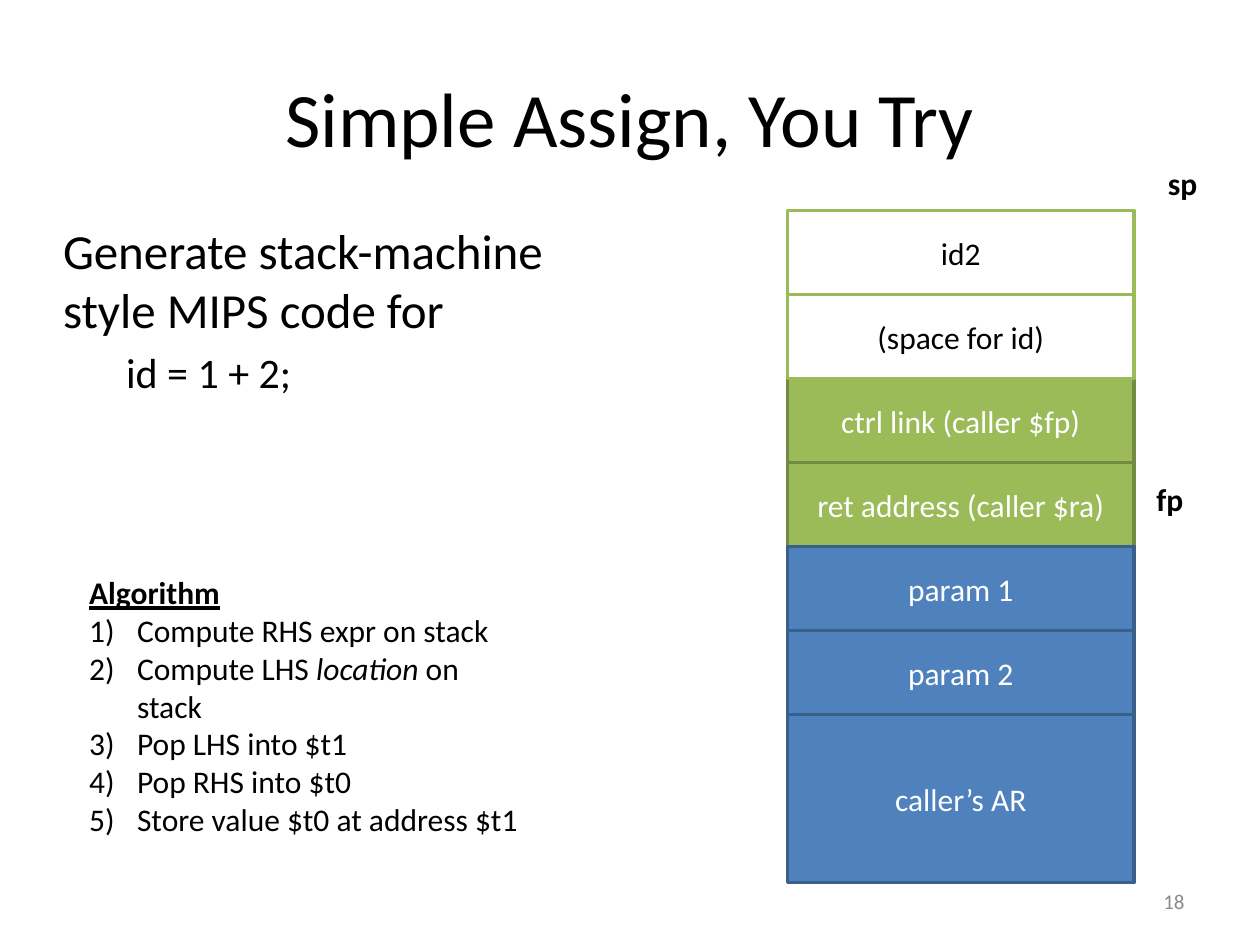
from pptx import Presentation
from pptx.dml.color import RGBColor
from pptx.enum.shapes import MSO_SHAPE
from pptx.enum.text import MSO_ANCHOR, MSO_AUTO_SIZE, PP_ALIGN
from pptx.oxml.ns import qn
from pptx.util import Inches, Pt
from lxml.etree import SubElement

TITLE = "Simple Assign, You Try"
TASK = [("Generate stack-machine style MIPS code for", 28, 0, 5.6),
        ("id = 1 + 2;", 24, 0.5, 4.8)]
HEAD = "Algorithm"
STEPS = [
    ["Compute RHS expr on stack"],
    ["Compute LHS ", "location", " on stack"],
    ["Pop LHS into $t1"],
    ["Pop RHS into $t0"],
    ["Store value $t0 at address $t1"],
]
STACK = [
    ("id2", "local", 1),
    ("(space for id)", "local", 1),
    ("ctrl link (caller $fp)", "frame", 1),
    ("ret address (caller $ra)", "frame", 1),
    ("param 1", "caller", 1),
    ("param 2", "caller", 1),
    ("caller’s AR", "caller", 2),
]
MARKS = [("sp", 9.17, 1.25), ("fp", 9.08, 3.76)]
NUMBER = "18"

THEME = {
    "font": "Calibri",
    "title": 44, "text": 18, "small": 12,
    "ink": "000000", "gray": "8B8B8B",
    "frame": ("9BBB59", "728A41", "FFFFFF"),
    "local": ("FFFFFF", "9BBB59", "000000"),
    "caller": ("4F81BD", "3A5F8B", "FFFFFF"),
}
LAYERS = ["frame", "local", "caller"]
LEFT, TOP, WIDTH, UNIT = 6.25, 1.67, 2.75, 2 / 3


def style(para, size=THEME["text"], color=THEME["ink"], bold=False):
    for run in para.runs:
        font = run.font
        font.name, font.size, font.bold = THEME["font"], Pt(size), bold
        font.color.rgb = RGBColor.from_string(color)


def place(shape, left, top, width, height):
    shape.left, shape.top = Inches(left), Inches(top)
    shape.width, shape.height = Inches(width), Inches(height)


def bare(frame):
    frame.margin_left = frame.margin_right = 0
    frame.margin_top = frame.margin_bottom = 0
    frame.auto_size = MSO_AUTO_SIZE.NONE
    frame.word_wrap = True


def indent(para, left, first, mark, **attrs):
    props = para._p.get_or_add_pPr()
    props.set("marL", str(Inches(left)))
    props.set("indent", str(Inches(first)))
    SubElement(props, qn(mark), **attrs)


def label(slide, text, left, top, width, height):
    box = slide.shapes.add_textbox(
        Inches(left), Inches(top), Inches(width), Inches(height))
    box.text_frame.word_wrap = True
    box.text_frame.text = text
    return box.text_frame


def add_task(body):
    place(body, 0.5, 1.75, 4.42, 4.95)
    frame = body.text_frame
    bare(frame)
    frame.text = "\n".join(row[0] for row in TASK)
    for para, (_, size, left, gap) in zip(frame.paragraphs, TASK):
        para.space_before = Pt(gap)
        indent(para, left, 0, "a:buNone")
        style(para, size)


def add_steps(slide):
    frame = label(slide, HEAD, 0.61, 4.5, 3.7, 1.9)
    frame.word_wrap = False
    head = frame.paragraphs[0]
    style(head, bold=True)
    head.runs[0].font.underline = True
    for parts in STEPS:
        para = frame.add_paragraph()
        indent(para, 0.38, -0.38, "a:buAutoNum", type="arabicParenR")
        for pos, part in enumerate(parts):
            run = para.add_run()
            run.text = part
            run.font.italic = pos == 1
        style(para)


def add_stack(slide):
    cells, top = [], TOP
    for text, kind, units in STACK:
        cells.append((text, kind, top, units * UNIT))
        top += units * UNIT
    for text, kind, top, height in sorted(
            cells, key=lambda cell: LAYERS.index(cell[1])):
        fill, line, ink = THEME[kind]
        cell = slide.shapes.add_shape(
            MSO_SHAPE.RECTANGLE, Inches(LEFT), Inches(top),
            Inches(WIDTH), Inches(height))
        cell.shadow.inherit = False
        cell.fill.solid()
        cell.fill.fore_color.rgb = RGBColor.from_string(fill)
        cell.line.color.rgb = RGBColor.from_string(line)
        cell.line.width = Pt(2)
        frame = cell.text_frame
        frame.text = text
        frame.vertical_anchor = MSO_ANCHOR.MIDDLE
        frame.paragraphs[0].alignment = PP_ALIGN.CENTER
        style(frame.paragraphs[0], color=ink)


def main():
    deck = Presentation()
    deck.slide_width, deck.slide_height = Inches(10), Inches(7.5)
    slide = deck.slides.add_slide(deck.slide_layouts[1])

    title = slide.shapes.title
    place(title, 0.5, 0.3, 9, 1.25)
    bare(title.text_frame)
    title.text_frame.text = TITLE
    title.text_frame.vertical_anchor = MSO_ANCHOR.MIDDLE
    title.text_frame.paragraphs[0].alignment = PP_ALIGN.CENTER
    style(title.text_frame.paragraphs[0], THEME["title"])

    add_task(slide.placeholders[1])
    add_steps(slide)
    add_stack(slide)
    for text, left, top in MARKS:
        style(label(slide, text, left, top, 0.5, 0.4).paragraphs[0], bold=True)

    number = label(slide, NUMBER, 7.17, 6.95, 2.33, 0.4)
    number.vertical_anchor = MSO_ANCHOR.MIDDLE
    number.paragraphs[0].alignment = PP_ALIGN.RIGHT
    style(number.paragraphs[0], THEME["small"], THEME["gray"])
    deck.save("out.pptx")


if __name__ == "__main__":
    main()
